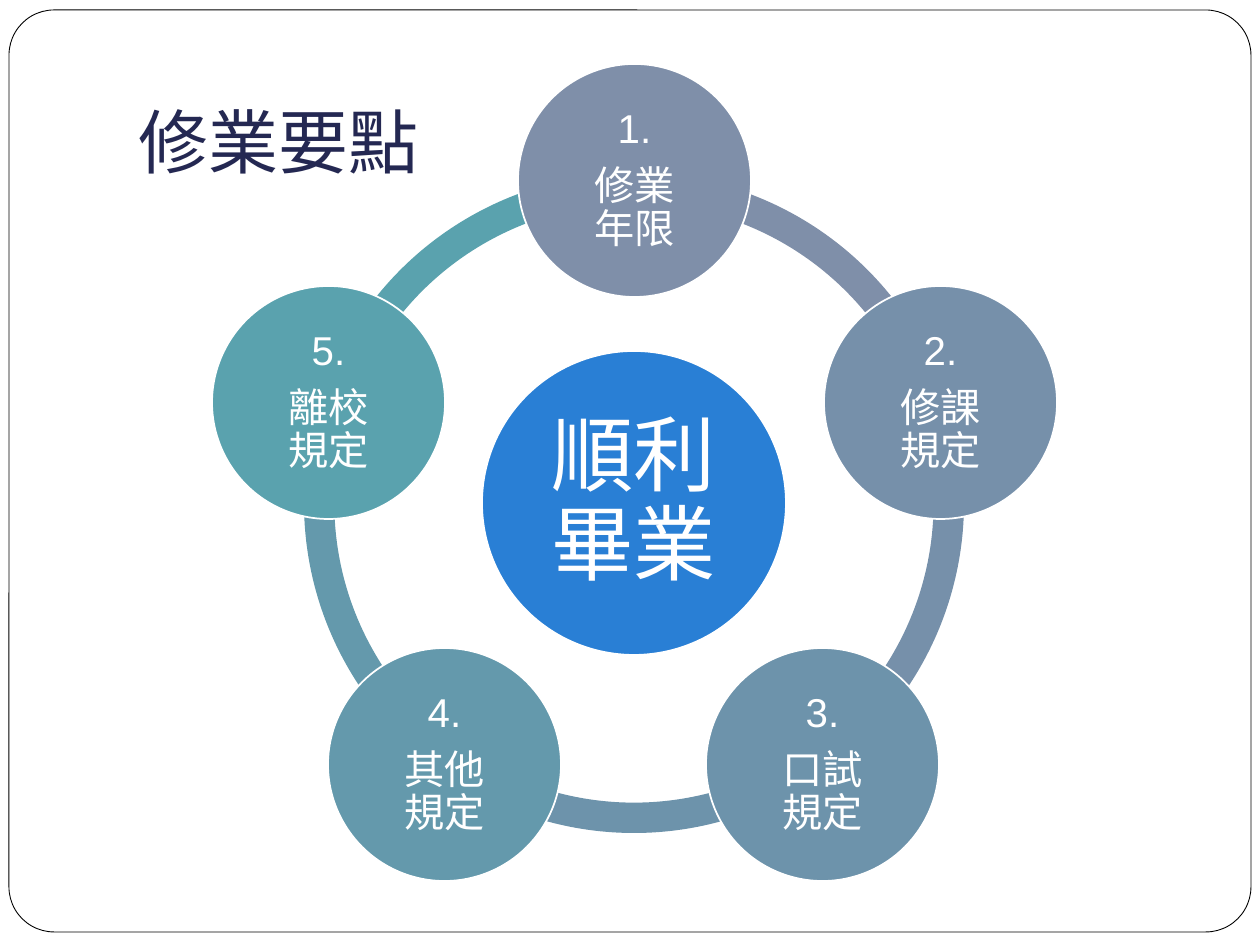
import math
from dataclasses import dataclass

import pptx
import pptx.dml.color
import pptx.enum.shapes
import pptx.enum.text
import pptx.util

EMU_PER_PX = 914400 / 126
ANGLE_UNIT = 0.6
SHAPES = pptx.enum.shapes.MSO_SHAPE
ANCHORS = pptx.enum.text.MSO_ANCHOR
ALIGNMENTS = pptx.enum.text.PP_ALIGN


@dataclass(frozen=True)
class Theme:
    white: str = "FFFFFF"
    black: str = "000000"
    title_color: str = "242852"
    hub_color: str = "297FD5"
    title_font: str = "Karla"
    body_font: str = "Arial"
    title_size: int = 40
    hub_size: int = 47
    step_size: int = 23
    frame_line: float = 0.5
    circle_line: float = 1


@dataclass(frozen=True)
class Box:
    left: int
    top: int
    width: int
    height: int


@dataclass(frozen=True)
class Step:
    label: str
    color: str


THEME = Theme()
SLIDE = Box(0, 0, 1260, 945)
FRAME = Box(9, 10, 1242, 922)
TITLE = Box(126, 38, 1071, 157)
CENTER_X, CENTER_Y = 634, 503
ORBIT_RADIUS = 322
RING_DIAMETER = 660
HUB_DIAMETER = 304
STEP_DIAMETER = 233
STEPS = [
    Step("修業\n年限", "7F8FA9"),
    Step("修課\n規定", "7690AA"),
    Step("口試\n規定", "6D93AB"),
    Step("其他\n規定", "6499AC"),
    Step("離校\n規定", "5AA2AE"),
]
STEP_ANGLE = 360 / len(STEPS)


def px(length: int) -> pptx.util.Emu:
    return pptx.util.Emu(round(length * EMU_PER_PX))


def rgb(color: str) -> pptx.dml.color.RGBColor:
    return pptx.dml.color.RGBColor.from_string(color)


def place(box: Box) -> list[pptx.util.Emu]:
    return [px(length) for length in (box.left, box.top, box.width, box.height)]


def square(center_x: int, center_y: int, size: int) -> Box:
    return Box(round(center_x - size / 2), round(center_y - size / 2), size, size)


def add_shape(slide, kind, box: Box, fill: str, line: str = "", line_width: float = 0):
    shape = slide.shapes.add_shape(kind, *place(box))
    shape.shadow.inherit = False
    shape.fill.solid()
    shape.fill.fore_color.rgb = rgb(fill)
    if line:
        shape.line.color.rgb = rgb(line)
        shape.line.width = pptx.util.Pt(line_width)
    else:
        shape.line.fill.background()
    return shape


def set_margins(text_frame, left: int, top: int, right: int, bottom: int) -> None:
    text_frame.margin_left, text_frame.margin_top = px(left), px(top)
    text_frame.margin_right, text_frame.margin_bottom = px(right), px(bottom)


def format_runs(paragraph, font: str, size: int, color: str) -> None:
    for run in paragraph.runs:
        run.font.name = font
        run.font.size = pptx.util.Pt(size)
        run.font.color.rgb = rgb(color)


def add_title(slide, text: str) -> None:
    text_frame = slide.shapes.add_textbox(*place(TITLE)).text_frame
    text_frame.word_wrap = True
    text_frame.vertical_anchor = ANCHORS.BOTTOM
    set_margins(text_frame, 13, 6, 13, 13)
    text_frame.text = text
    format_runs(text_frame.paragraphs[0], THEME.title_font, THEME.title_size, THEME.title_color)


def add_circle(slide, box: Box, fill: str, lines: list[str], size: int, margin: int) -> None:
    circle = add_shape(slide, SHAPES.OVAL, box, fill, THEME.white, THEME.circle_line)
    text_frame = circle.text_frame
    text_frame.word_wrap = True
    text_frame.vertical_anchor = ANCHORS.MIDDLE
    set_margins(text_frame, margin, margin, margin, margin)
    for index, line in enumerate(lines):
        paragraph = text_frame.add_paragraph() if index else text_frame.paragraphs[0]
        paragraph.text = line
        paragraph.alignment = ALIGNMENTS.CENTER
        paragraph.line_spacing = 0.9
        paragraph.space_after = pptx.util.Pt(round(size * 0.35))
        format_runs(paragraph, THEME.body_font, size, THEME.white)


def add_arc(slide, index: int, color: str) -> None:
    arc = add_shape(slide, SHAPES.BLOCK_ARC, square(CENTER_X, CENTER_Y, RING_DIAMETER), color)
    start = 270 + index * STEP_ANGLE
    arc.adjustments[0] = start % 360 * ANGLE_UNIT
    arc.adjustments[1] = (start + STEP_ANGLE) % 360 * ANGLE_UNIT
    arc.adjustments[2] = 0.046


def add_step(slide, index: int, step: Step) -> None:
    angle = math.radians(270 + index * STEP_ANGLE)
    center_x = round(CENTER_X + ORBIT_RADIUS * math.cos(angle))
    center_y = round(CENTER_Y + ORBIT_RADIUS * math.sin(angle))
    box = square(center_x, center_y, STEP_DIAMETER)
    add_circle(slide, box, step.color, [f"{index + 1}.", step.label], THEME.step_size, 4)


def main() -> None:
    presentation = pptx.Presentation()
    presentation.slide_width = px(SLIDE.width)
    presentation.slide_height = px(SLIDE.height)
    slide = presentation.slides.add_slide(presentation.slide_layouts[6])

    frame = add_shape(
        slide, SHAPES.ROUNDED_RECTANGLE, FRAME, THEME.white, THEME.black, THEME.frame_line
    )
    frame.adjustments[0] = 0.049
    add_title(slide, "修業要點")

    for index, step in reversed(list(enumerate(STEPS))):
        add_arc(slide, index, step.color)
    hub = square(CENTER_X, CENTER_Y, HUB_DIAMETER)
    add_circle(slide, hub, THEME.hub_color, ["順利畢業"], THEME.hub_size, 9)
    for index, step in enumerate(STEPS):
        add_step(slide, index, step)

    presentation.save("out.pptx")


if __name__ == "__main__":
    main()
